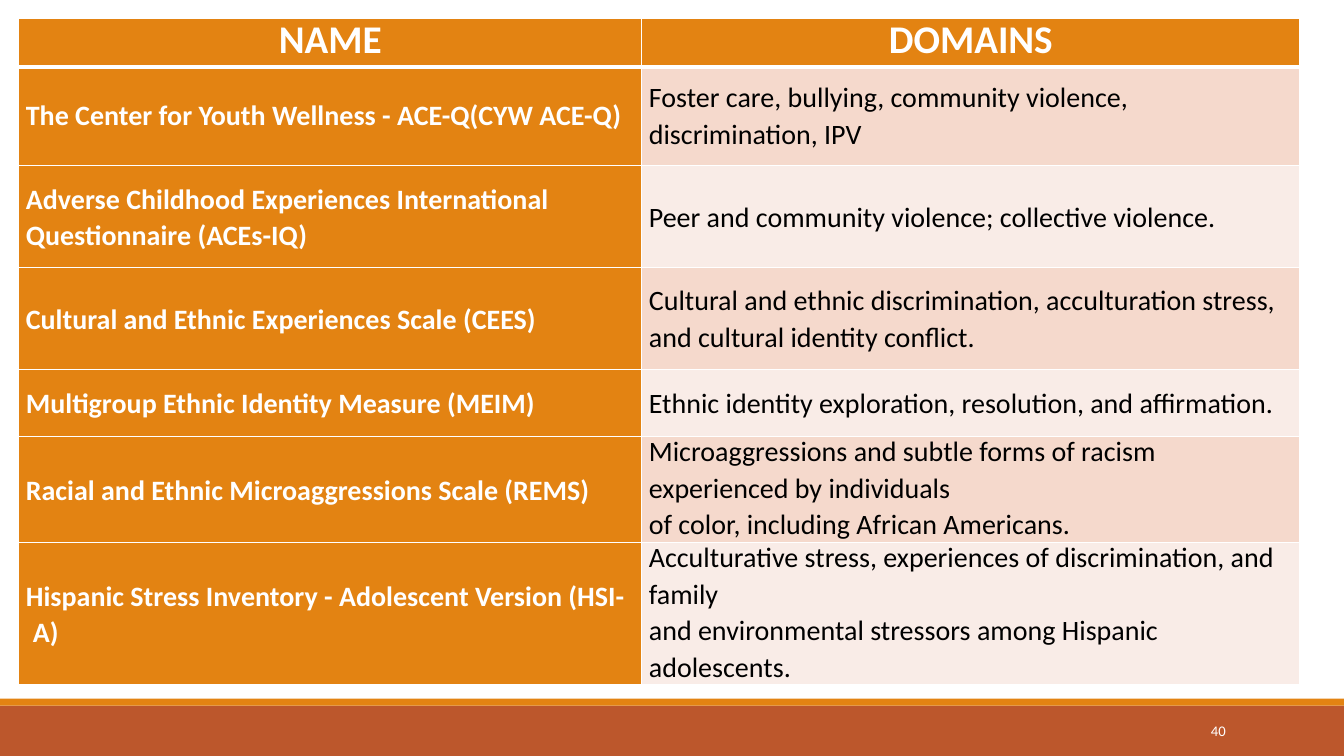
import pptx
import pptx.util
import pptx.dml.color
import pptx.enum.shapes
import pptx.enum.text
import pptx.oxml
import pptx.oxml.ns

Pt = pptx.util.Pt
COLORS = {"orange": "E38312", "rust": "BC572C", "pink": "F5D9CC",
          "blush": "F9ECE7", "white": "FFFFFF", "black": "000000"}
HEADERS = ["NAME", "DOMAINS"]
SCALES = [
    ("The Center for Youth Wellness - ACE-Q(CYW ACE-Q)",
     ["Foster care, bullying, community violence, discrimination, IPV"]),
    ("Adverse Childhood Experiences International Questionnaire (ACEs-IQ)",
     ["Peer and community violence; collective violence."]),
    ("Cultural and Ethnic Experiences Scale (CEES)",
     ["Cultural and ethnic discrimination, acculturation stress, and cultural identity conflict."]),
    ("Multigroup Ethnic Identity Measure (MEIM)",
     ["Ethnic identity exploration, resolution, and affirmation."]),
    ("Racial and Ethnic Microaggressions Scale (REMS)",
     ["Microaggressions and subtle forms of racism",
      "experienced by individuals",
      "of color, including African Americans."]),
    ("Hispanic Stress Inventory - Adolescent Version (HSI-A)",
     ["Acculturative stress, experiences of discrimination, and",
      "family",
      "and environmental stressors among Hispanic adolescents."]),
]
COL_WIDTHS = [445, 470]
ROW_HEIGHTS = [34.6, 70.6, 72.7, 72.7, 48.2, 75.6, 101.5]


def style_run(r, size, color, bold=False):
    r.font.name = "Calibri"
    r.font.size = Pt(size)
    r.font.bold = bold
    r.font.color.rgb = pptx.dml.color.RGBColor.from_string(COLORS[color])


def fill_cell(cell, lines, fill, size, color, bold, header):
    cell.margin_top = cell.margin_bottom = cell.margin_right = 0
    cell.margin_left = 0 if header else Pt(5)
    anchor = pptx.enum.text.MSO_ANCHOR
    cell.vertical_anchor = anchor.TOP if header else anchor.MIDDLE
    tcPr = cell._tc.get_or_add_tcPr()
    for side in ("L", "R", "T", "B"):
        heavy = (header and side == "B") or (row == 1 and side == "T")
        width = Pt(3 if heavy else 1)
        tcPr.append(pptx.oxml.parse_xml(
            f'<a:ln{side} {pptx.oxml.ns.nsdecls("a")} w="{width}"><a:solidFill>'
            f'<a:srgbClr val="{COLORS["white"]}"/></a:solidFill></a:ln{side}>'))
    cell.fill.solid()
    cell.fill.fore_color.rgb = pptx.dml.color.RGBColor.from_string(COLORS[fill])
    cell.text_frame.text = "\n".join(lines)
    for i, p in enumerate(cell.text_frame.paragraphs):
        if header:
            p.alignment = pptx.enum.text.PP_ALIGN.CENTER
            p.line_spacing = Pt(32.6)
        elif len(lines) == 1:
            p.line_spacing = 1.07
        elif i == 0:
            p.line_spacing = Pt(23.3)
        elif lines[i].startswith("and environmental"):
            p.line_spacing = 1.07
        else:
            p.space_before = Pt(1.6)
        style_run(p.runs[0], size, color, bold)


prs = pptx.Presentation()
prs.slide_width, prs.slide_height = Pt(960), Pt(540)
s = prs.slides.add_slide(prs.slide_layouts[6])

for top, height, color in [(504, 36, "rust"), (499, 5, "orange")]:
    sp = s.shapes.add_shape(pptx.enum.shapes.MSO_SHAPE.RECTANGLE,
                            0, Pt(top), Pt(960), Pt(height))
    sp.shadow.inherit = False
    sp.fill.solid()
    sp.fill.fore_color.rgb = pptx.dml.color.RGBColor.from_string(COLORS[color])
    sp.line.fill.background()

table = s.shapes.add_table(len(ROW_HEIGHTS), 2, Pt(13.5), Pt(13.2),
                           Pt(sum(COL_WIDTHS)), Pt(sum(ROW_HEIGHTS))).table
table.horz_banding = False
for column, width in zip(table.columns, COL_WIDTHS):
    column.width = Pt(width)
for table_row, height in zip(table.rows, ROW_HEIGHTS):
    table_row.height = Pt(height)

row = 0
for col, heading in enumerate(HEADERS):
    fill_cell(table.cell(0, col), [heading], "orange", 28, "white", True, True)
for row, (name, domains) in enumerate(SCALES, 1):
    fill_cell(table.cell(row, 0), [name], "orange", 20, "white", True, False)
    fill_cell(table.cell(row, 1), domains, "pink" if row % 2 else "blush",
              20, "black", False, False)
for col in range(2):
    table.cell(1, col).margin_bottom = Pt(2)
table.cell(1, 1).margin_right = Pt(8)
pPr = table.cell(len(SCALES), 0).text_frame.paragraphs[0]._p.get_or_add_pPr()
pPr.set("marL", str(Pt(5)))
pPr.set("indent", str(-Pt(5)))

tf = s.shapes.add_textbox(Pt(862), Pt(517.5), Pt(18), Pt(12)).text_frame
tf.word_wrap = True
tf.margin_left = Pt(3)
tf.margin_right = tf.margin_top = tf.margin_bottom = 0
tf.text = "40"
tf.paragraphs[0].line_spacing = Pt(11)
style_run(tf.paragraphs[0].runs[0], 10.5, "white")

prs.save("out.pptx")
